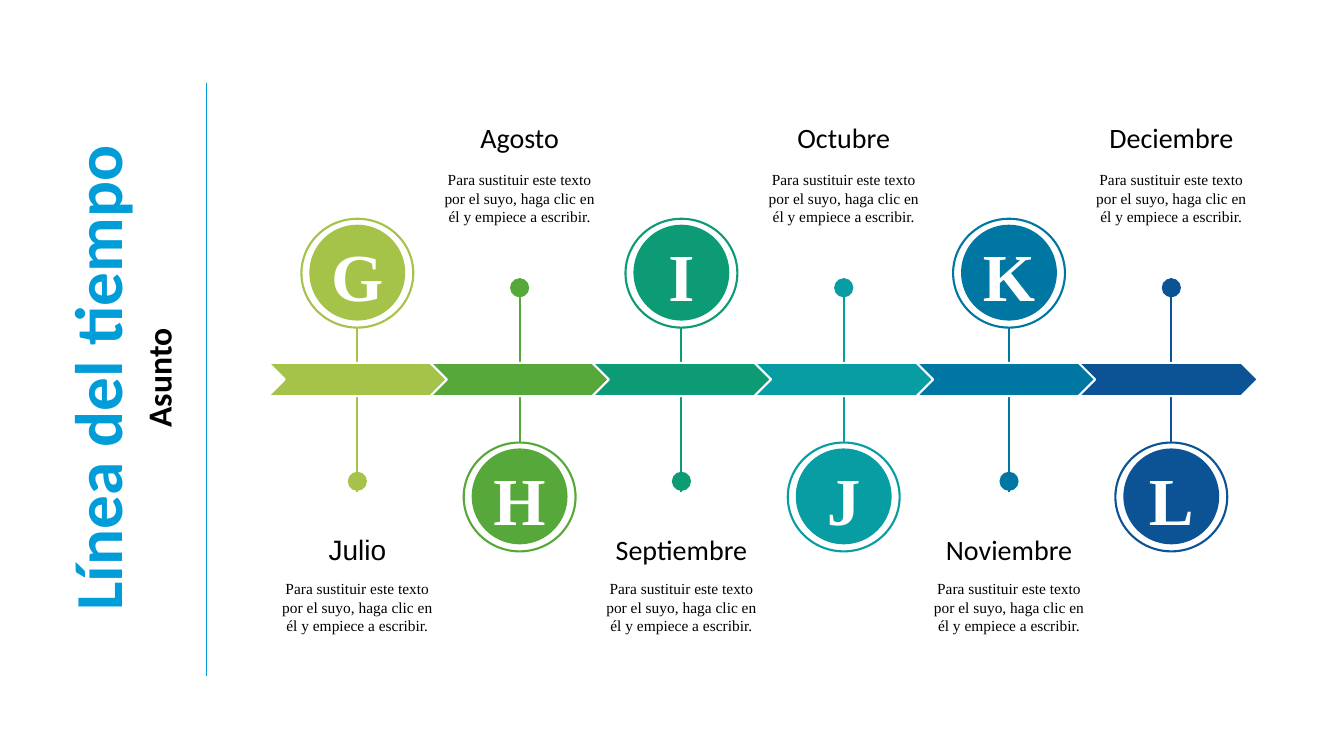
from dataclasses import dataclass

from lxml import etree
from pptx import Presentation
from pptx.dml.color import RGBColor
from pptx.enum.shapes import MSO_CONNECTOR, MSO_SHAPE
from pptx.enum.text import MSO_AUTO_SIZE, PP_ALIGN
from pptx.oxml.ns import qn
from pptx.util import Inches, Pt

STRAIGHT = MSO_CONNECTOR.STRAIGHT
OVAL = MSO_SHAPE.OVAL
DOT = MSO_SHAPE.FLOWCHART_CONNECTOR
CHEVRON = MSO_SHAPE.CHEVRON
GROW = MSO_AUTO_SIZE.SHAPE_TO_FIT_TEXT
CENTER = PP_ALIGN.CENTER

BLACK = RGBColor(0x00, 0x00, 0x00)
WHITE = RGBColor(0xFF, 0xFF, 0xFF)
SKY = RGBColor(0x00, 0x9D, 0xD9)
LIME = RGBColor(0xA5, 0xC2, 0x49)
GREEN = RGBColor(0x55, 0xA8, 0x39)
EMERALD = RGBColor(0x0C, 0x9B, 0x74)
TEAL = RGBColor(0x08, 0x9C, 0xA3)
BLUE = RGBColor(0x00, 0x76, 0xA3)
NAVY = RGBColor(0x0B, 0x53, 0x94)

SANS, SERIF, ARIAL = "Calibri", "Times New Roman", "Arial"
DESCRIPTION = "Para sustituir este texto por el suyo, haga clic en él y empiece a escribir."

# The page is a grid of square cells, a tenth of an inch each
COLUMNS, ROWS = 133.33, 75
CELL = 0.1

# Arrow band, in cells
BAND_LEFT, BAND_TOP = 26.6, 36
ARROW_WIDTH, ARROW_HEIGHT, ARROW_PITCH = 17.8, 3.3, 16.08


@dataclass
class Side:
    """Rows used by a month whose medallion is above or below the band."""
    stem_start: float
    stem_end: float
    ring: float
    dot: float
    name: float
    description: float


ABOVE = Side(48.8, 32.5, 21.7, 46.8, 52.3, 57)
BELOW = Side(27.6, 43.9, 43.9, 27.6, 11.5, 16.4)

# Letter, month, font of the month, colour, centre column, side
MONTHS = [
    ("G", "Julio", ARIAL, LIME, 35.45, ABOVE),
    ("H", "Agosto", SANS, GREEN, 51.55, BELOW),
    ("I", "Septiembre", SANS, EMERALD, 67.6, ABOVE),
    ("J", "Octubre", SANS, TEAL, 83.7, BELOW),
    ("K", "Noviembre", SANS, BLUE, 100.1, ABOVE),
    ("L", "Deciembre", SANS, NAVY, 116.2, BELOW),
]


def cells(count):
    return Inches(count * CELL)


def add_line(page, start, end, color, weight):
    line = page.shapes.add_connector(STRAIGHT, *map(cells, (*start, *end)))
    line.line.color.rgb = color
    line.line.width = Pt(weight)
    properties = line._element.spPr
    etree.SubElement(properties, qn("a:effectLst"))


def add_figure(page, kind, center, top, width, height, fill=None, outline=None):
    figure = page.shapes.add_shape(
        kind, *map(cells, (center - width / 2, top, width, height)))
    figure.shadow.inherit = False
    if fill is None:
        figure.fill.background()
    else:
        figure.fill.solid()
        figure.fill.fore_color.rgb = fill
    if outline is None:
        figure.line.fill.background()
    else:
        figure.line.color.rgb = outline
        figure.line.width = Pt(1.5)
    return figure


def add_text(page, text, center, top, width, height, font, size,
             color=BLACK, bold=False, turn=0):
    box = page.shapes.add_textbox(
        *map(cells, (center - width / 2, top, width, height)))
    box.rotation = turn
    frame = box.text_frame
    frame.text = text
    frame.word_wrap = True
    frame.auto_size = GROW
    para = frame.paragraphs[0]
    para.alignment = CENTER
    span = para.runs[0]
    span.font.name = font
    span.font.size = Pt(size)
    span.font.bold = bold
    span.font.color.rgb = color


def add_heading(page):
    # Both titles read upwards, centred on the height of the page
    add_text(page, "Línea del tiempo", 9.5, (ROWS - 9) / 2, ROWS, 9,
             SANS, 48, SKY, bold=True, turn=270)
    add_text(page, "Asunto", 15.7, (ROWS - 5) / 2, ROWS, 5,
             SANS, 24, bold=True, turn=270)
    add_line(page, (20.5, 8.2), (20.5, 67.1), SKY, 1)


def add_month(page, letter, name, font, color, center, side):
    # Stem with its end dot
    add_line(page, (center, side.stem_start), (center, side.stem_end), color, 1.5)
    add_figure(page, DOT, center, side.dot, 1.9, 1.9, fill=color)
    # Medallion
    add_figure(page, OVAL, center, side.ring, 11.1, 10.8, outline=color)
    add_figure(page, OVAL, center, side.ring + 0.7, 9.3, 9.3, color, color)
    add_text(page, letter, center, side.ring + 1.1, 9.4, 9,
             SERIF, 48, WHITE, bold=True)
    # Caption
    add_text(page, name, center, side.name, 17.9, 4.3, font, 20)
    add_text(page, DESCRIPTION, center, side.description, 17.8, 8.3, SERIF, 11)


def add_arrow(page, index, color):
    center = BAND_LEFT + index * ARROW_PITCH + ARROW_WIDTH / 2
    arrow = add_figure(page, CHEVRON, center, BAND_TOP,
                       ARROW_WIDTH, ARROW_HEIGHT, color, WHITE)
    arrow.adjustments[0] = 0.5


def main():
    deck = Presentation()
    deck.slide_width, deck.slide_height = cells(COLUMNS), cells(ROWS)
    page = deck.slides.add_slide(deck.slide_layouts[6])
    add_heading(page)
    for month in MONTHS:
        add_month(page, *month)
    # The band lies over the stems
    for index, (_, _, _, color, _, _) in enumerate(MONTHS):
        add_arrow(page, index, color)
    deck.save("out.pptx")


if __name__ == "__main__":
    main()
